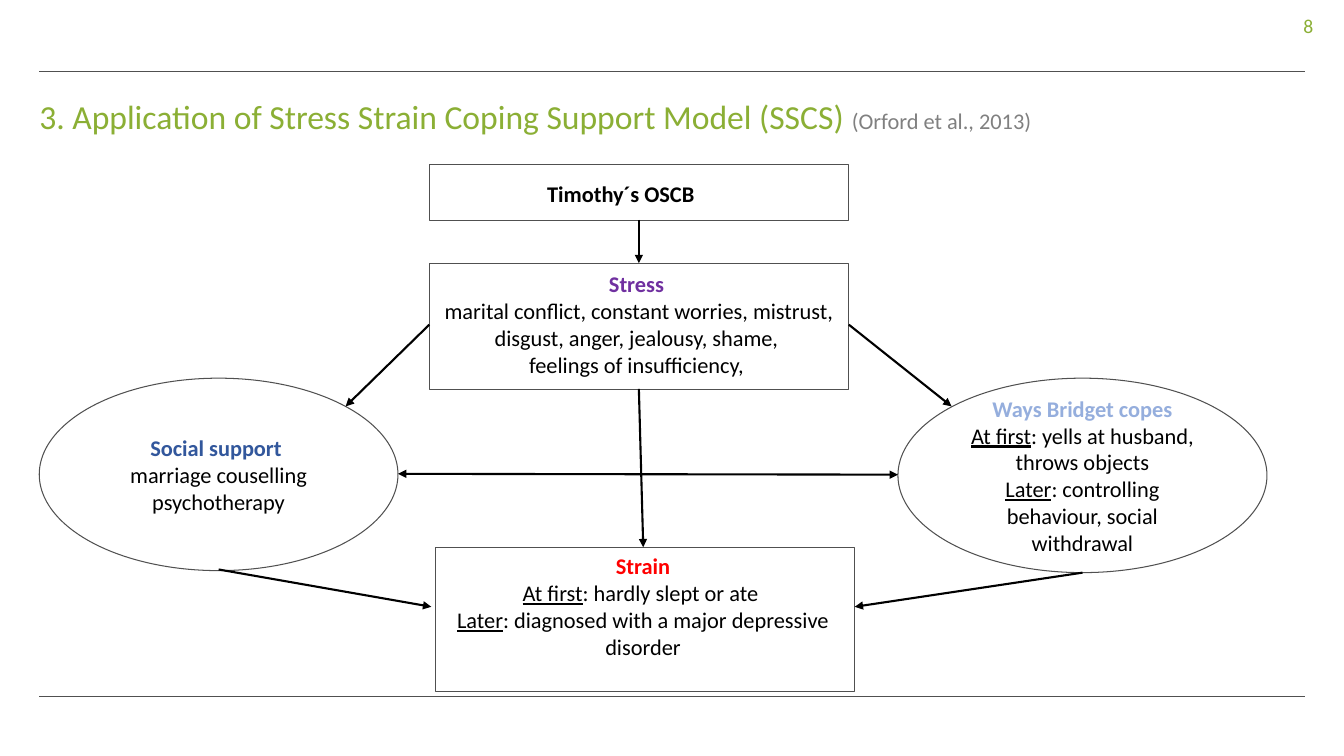
from dataclasses import dataclass

from lxml import etree
from pptx import Presentation
from pptx.dml.color import RGBColor
from pptx.enum.shapes import MSO_CONNECTOR, MSO_SHAPE
from pptx.enum.text import MSO_ANCHOR as Anchor, MSO_AUTO_SIZE, PP_ALIGN as Align
from pptx.oxml.ns import qn
from pptx.util import Cm, Pt

FONT = "Calibri"
GREEN, GREY, RULE, BLACK = "8BAF35", "808080", "505050", "000000"


@dataclass
class Run:
    text: str
    color: str = BLACK
    size: float = 16
    bold: bool = False
    underline: bool = False


@dataclass
class Node:
    kind: MSO_SHAPE
    box: tuple[float, float, float, float]
    paragraphs: list[list[Run]]
    anchor: Anchor = Anchor.MIDDLE
    align: Align = Align.CENTER
    insets: tuple[float, float, float, float] = (0.25, 0.13, 0.25, 0.13)


@dataclass
class Line:
    start: tuple[float, float]
    end: tuple[float, float]
    color: str = BLACK
    width: float = 1.5
    arrowheads: tuple[str, ...] = ("tailEnd",)


def heading(text: str, color: str) -> list[Run]:
    return [Run(text, color, bold=True)]


def phase(label: str, text: str) -> list[Run]:
    return [Run(label, underline=True), Run(text)]


RECTANGLE, OVAL = MSO_SHAPE.RECTANGLE, MSO_SHAPE.OVAL
NODES = [
    Node(RECTANGLE, (10.82, 4.14, 10.57, 1.42), [heading("Timothy´s OSCB", BLACK)],
         Anchor.TOP, Align.LEFT, (2.97, 0.41, 0.25, 0.13)),
    Node(RECTANGLE, (10.82, 6.63, 10.57, 3.18), [
        heading("Stress ", "7030A0"),
        [Run("marital conflict, constant worries, mistrust, disgust, anger, jealousy, shame, ")],
        [Run("feelings of insufficiency, ")],
    ], Anchor.TOP, insets=(0.25, 0.18, 0.25, 0.13)),
    Node(RECTANGLE, (10.97, 13.79, 10.57, 3.63), [
        heading("Strain", "FF0000"),
        phase("At first", ": hardly slept or ate "),
        phase("Later", ": diagnosed with a major depressive disorder"),
    ], Anchor.TOP, insets=(0.15, 0.13, 0.25, 0.13)),
    Node(OVAL, (0.99, 9.53, 9.04, 4.85), [
        heading("Social support ", "32579C"),
        [Run("marriage couselling")],
        [Run("psychotherapy")],
    ]),
    Node(OVAL, (22.63, 9.53, 9.3, 4.9), [
        heading("Ways Bridget copes", "95AEDD"),
        phase("At first", ": yells at husband, throws objects"),
        phase("Later", ": controlling behaviour, social withdrawal"),
    ]),
]
RULES = [Line((0.99, y), (32.89, y), RULE, 0.5, ()) for y in (1.8, 17.55)]
ARROWS = [
    Line((16.1, 5.54), (16.1, 6.63)),
    Line((27.28, 14.43), (21.54, 15.29)),
    Line((5.51, 14.35), (10.87, 15.29)),
    Line((16.1, 9.8), (16.21, 13.79)),
    Line((10.82, 8.18), (8.71, 10.24)),
    Line((21.39, 8.18), (23.98, 10.24)),
    Line((10.03, 11.94), (22.63, 11.96), arrowheads=("headEnd", "tailEnd")),
]


def rgb(color: str) -> RGBColor:
    return RGBColor.from_string(color)


def write_text(shape, paragraphs: list[list[Run]], anchor: Anchor, align: Align,
               insets=(0, 0, 0, 0), line_spacing: float = 1.0) -> None:
    frame = shape.text_frame
    frame.word_wrap = True
    frame.auto_size = MSO_AUTO_SIZE.NONE
    frame.vertical_anchor = anchor
    frame.margin_left, frame.margin_top, frame.margin_right, frame.margin_bottom = map(Cm, insets)
    for index, runs in enumerate(paragraphs):
        paragraph = frame.add_paragraph() if index else frame.paragraphs[0]
        paragraph.alignment = align
        paragraph.line_spacing = line_spacing
        for item in runs:
            run = paragraph.add_run()
            run.text = item.text
            run.font.name = FONT
            run.font.size = Pt(item.size)
            run.font.bold = item.bold
            run.font.underline = item.underline
            run.font.color.rgb = rgb(item.color)


def draw_node(slide, node: Node) -> None:
    shape = slide.shapes.add_shape(node.kind, *map(Cm, node.box))
    shape.shadow.inherit = False
    shape.fill.background()
    shape.line.color.rgb = rgb(RULE)
    shape.line.width = Pt(0.75)
    write_text(shape, node.paragraphs, node.anchor, node.align, node.insets)


def draw_line(slide, line: Line) -> None:
    connector = slide.shapes.add_connector(
        MSO_CONNECTOR.STRAIGHT, *map(Cm, line.start + line.end))
    connector.line.color.rgb = rgb(line.color)
    connector.line.width = Pt(line.width)
    outline = connector.line._get_or_add_ln()
    for end in line.arrowheads:
        etree.SubElement(outline, qn(f"a:{end}"), type="triangle")
    etree.SubElement(connector._element.spPr, qn("a:effectLst"))


def main() -> None:
    presentation = Presentation()
    presentation.slide_width, presentation.slide_height = Cm(33.87), Cm(19.05)
    slide = presentation.slides.add_slide(presentation.slide_layouts[5])

    # Rules and page number
    for rule in RULES:
        draw_line(slide, rule)
    number = slide.shapes.add_textbox(Cm(30.28), Cm(0.41), Cm(2.82), Cm(0.53))
    write_text(number, [[Run("8", GREEN, 14)]], Anchor.BOTTOM, Align.RIGHT, line_spacing=0.9)

    # Title
    title = slide.shapes.title
    title.left, title.top, title.width, title.height = map(Cm, (0.99, 2.54, 31.9, 0.91))
    write_text(title, [[
        Run("3. Application of Stress Strain Coping Support Model (SSCS) ", GREEN, 24),
        Run("(Orford et al., 2013)", GREY),
    ]], Anchor.MIDDLE, Align.LEFT, line_spacing=0.9)

    # Model diagram
    for node in NODES:
        draw_node(slide, node)
    for arrow in ARROWS:
        draw_line(slide, arrow)

    presentation.save("out.pptx")


if __name__ == "__main__":
    main()
